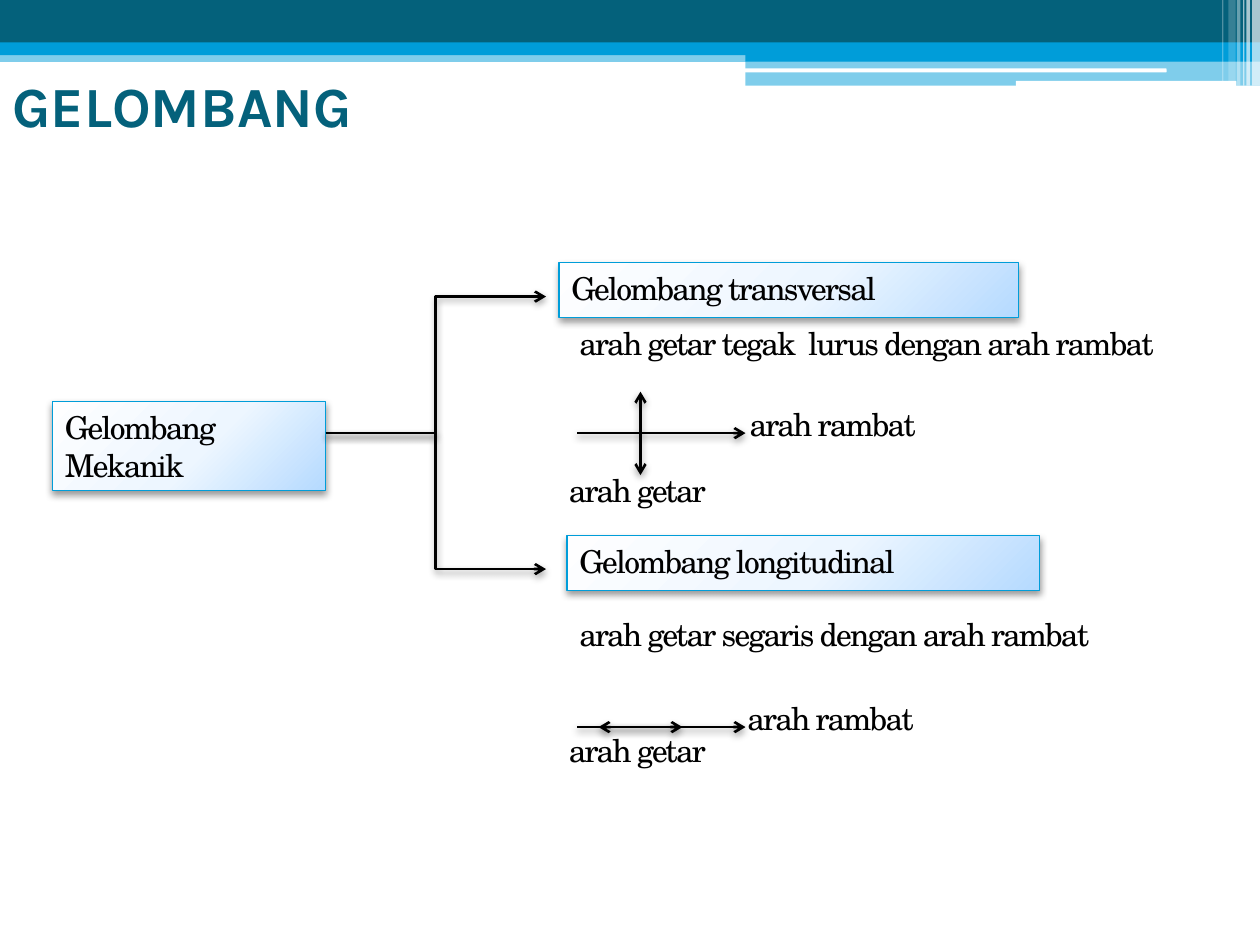
from pptx import Presentation
from pptx.util import Inches, Pt
from pptx.dml.color import RGBColor
from pptx.enum.shapes import MSO_CONNECTOR, MSO_SHAPE
from pptx.enum.text import MSO_ANCHOR, PP_ALIGN
from pptx.oxml import parse_xml
from pptx.oxml.ns import nsdecls
from lxml.etree import SubElement

TEAL = RGBColor(0x04, 0x61, 0x7B)
BLUE = RGBColor(0x00, 0x9D, 0xD9)
WHITE = RGBColor(0xFF, 0xFF, 0xFF)
BLACK = RGBColor(0x00, 0x00, 0x00)
TINTS = [(0, RGBColor(0xFE, 0xFE, 0xFF)), (55, RGBColor(0xED, 0xF6, 0xFF)),
         (100, RGBColor(0xB5, 0xDA, 0xFF))]
A = "{http://schemas.openxmlformats.org/drawingml/2006/main}"

# Grid of 120 columns by 90 rows
CELL = Inches(10) / 120
ROW = 5.25  # height of one line of text with its margins

deck = Presentation()
deck.slide_width, deck.slide_height = Inches(10), Inches(7.5)
slide = deck.slides.add_slide(deck.slide_layouts[5])
shapes = slide.shapes


def write(frame, text, font="TeX Gyre Schola", size=18, color=BLACK,
          bold=False, track=-1, anchor=MSO_ANCHOR.TOP):
    frame.word_wrap = True
    frame.vertical_anchor = anchor
    frame.text = text
    for para in frame.paragraphs:
        para.alignment = PP_ALIGN.LEFT
        for run in para.runs:
            run.font.name, run.font.size = font, Pt(size)
            run.font.bold, run.font.color.rgb = bold, color
            run.font._element.set("spc", str(track * 100))


def shade(shape):
    shape._element.spPr.append(parse_xml(
        f'<a:effectLst {nsdecls("a")}><a:outerShdw blurRad="{Pt(4.1)}" '
        f'dist="{Pt(2)}" dir="5400000" rotWithShape="0"><a:srgbClr val="{BLACK}">'
        '<a:alpha val="40000"/></a:srgbClr></a:outerShdw></a:effectLst>'))


# Top bands and stripes: left, top, width, height, colour, opacity
RECT, ROUND = MSO_SHAPE.RECTANGLE, MSO_SHAPE.ROUNDED_RECTANGLE
for kind, x, y, w, h, color, part in [
        (RECT, 0, 4.8, 120, 1.1, BLUE, 50),
        (RECT, 0, 0, 120, 4.1, TEAL, 100),
        (RECT, 0, 4.05, 120, 1.2, BLUE, 100),
        (RECT, 71, 4.7, 49, 1.15, BLUE, 100),
        (RECT, 71, 5.8, 49, 2.35, BLUE, 50),
        (ROUND, 70.9, 6.5, 40.2, 0.4, WHITE, 100),
        (ROUND, 96.75, 7.7, 21, 0.5, WHITE, 100),
        (RECT, 119.25, 0, 0.75, 8.15, WHITE, 65),
        (RECT, 118.7, 0, 0.35, 8.15, WHITE, 65),
        (RECT, 118.4, 0, 0.12, 8.15, WHITE, 60),
        (RECT, 117.8, 0, 0.35, 8.15, WHITE, 40),
        (RECT, 117, 0, 0.7, 7.7, WHITE, 20),
        (RECT, 116.4, 0, 0.12, 7.7, WHITE, 30)]:
    band = shapes.add_shape(kind, *[int(n * CELL) for n in (x, y, w, h)])
    band.shadow.inherit = False
    band.fill.solid()
    band.fill.fore_color.rgb = color
    band.line.fill.background()
    if part < 100:
        tone = band._element.spPr.find(f"{A}solidFill/{A}srgbClr")
        SubElement(tone, f"{A}alpha", val=str(part * 1000))

# Title
title = shapes.title
title.left, title.top, title.width, title.height = [
    int(n * CELL) for n in (0, 6, 108, 8)]
write(title.text_frame, "GELOMBANG", font="Karla", size=32.4, color=TEAL,
      bold=True, track=0, anchor=MSO_ANCHOR.MIDDLE)

# Boxes with a soft gradient
stops = "".join(f'<a:gs pos="{pos * 1000}"><a:srgbClr val="{tint}"/></a:gs>'
                for pos, tint in TINTS)
for text, x, y, w, h in [
        ("Gelombang transversal", 53.25, 25, 43.75, ROW),
        ("Gelombang longitudinal", 54, 51, 45, ROW),
        ("Gelombang\nMekanik", 5, 38.25, 26, 8.5)]:
    box = shapes.add_shape(RECT, *[int(n * CELL) for n in (x, y, w, h)])
    box._element.spPr.insert(2, parse_xml(
        f'<a:gradFill {nsdecls("a")} rotWithShape="1"><a:gsLst>{stops}</a:gsLst>'
        '<a:path path="circle"><a:fillToRect l="-40000" t="-90000" '
        'r="140000" b="190000"/></a:path></a:gradFill>'))
    box.line.color.rgb, box.line.width = BLUE, Pt(0.75)
    shade(box)
    write(box.text_frame, text)

# Branches and direction arrows: from, to, arrowhead at both ends
BENT, LINE = MSO_CONNECTOR.ELBOW, MSO_CONNECTOR.STRAIGHT
for kind, x, y, right, low, both in [
        (BENT, 31, 41.25, 52, 54.2, False),
        (BENT, 31, 41.25, 52, 28.25, False),
        (LINE, 55, 41.25, 71, 41.25, False),
        (LINE, 61, 37.3, 61, 45.25, True),
        (LINE, 55, 69.25, 71, 69.25, False),
        (LINE, 65, 69.25, 57, 69.25, True)]:
    arrow = shapes.add_connector(
        kind, *[int(n * CELL) for n in (x, y, right, low)])
    arrow.line.color.rgb, arrow.line.width = BLACK, Pt(1.5)
    stroke = arrow._element.spPr.find(f"{A}ln")
    for end in ("headEnd", "tailEnd") if both else ("tailEnd",):
        SubElement(stroke, A + end, type="arrow")
    shade(arrow)

# Captions
for text, x, y, w in [
        ("arah getar tegak  lurus dengan arah rambat", 54, 30.25, 64.5),
        ("arah getar segaris dengan arah rambat", 54, 58, 59),
        ("arah rambat", 70.2, 38, 19.8),
        ("arah getar", 53, 44.25, 17),
        ("arah rambat", 70, 66, 19.8),
        ("arah getar", 53, 69, 17)]:
    note = shapes.add_textbox(*[int(n * CELL) for n in (x, y, w, ROW)])
    write(note.text_frame, text)

deck.save("out.pptx")
